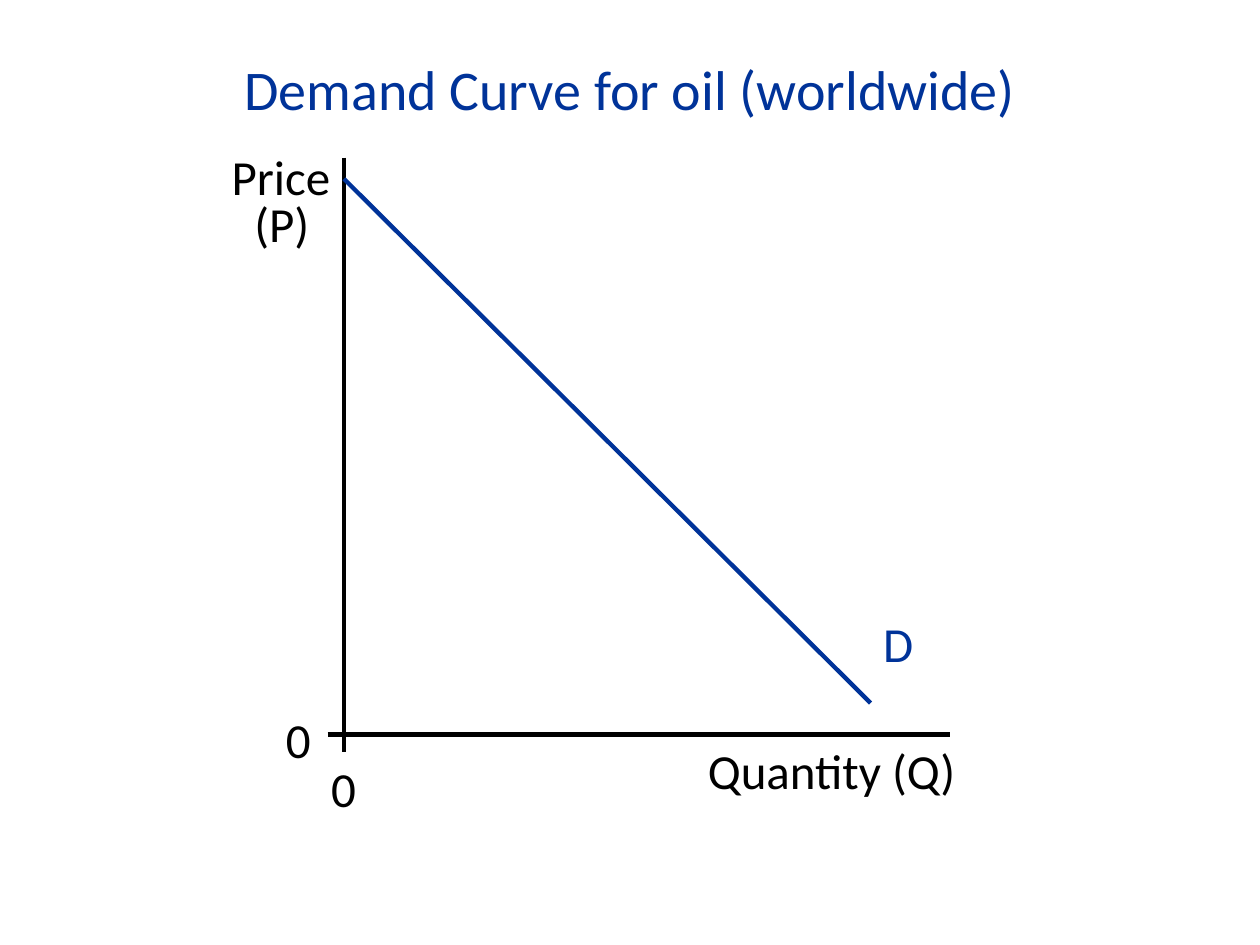
from lxml import etree
from pptx import Presentation
from pptx import util as u
from pptx.dml.color import RGBColor
from pptx.enum import shapes, text
from pptx.oxml.ns import qn

COLORS = {"ink": "000000", "demand": "003399"}


class Painter:
    """Draws styled labels and lines on the current slide."""

    font = "Calibri"
    line_width = 2.5

    def __init__(self, slide):
        self.s = slide

    def label(self, lines, left, top, width, height, color="ink", size=28,
              align=None, anchor=text.MSO_ANCHOR.TOP, spacing=None,
              indents=None, wrap=True):
        sp = self.s.shapes.add_textbox(*map(u.Inches, (left, top, width, height)))
        tf = sp.text_frame
        tf.word_wrap = wrap
        tf.auto_size = text.MSO_AUTO_SIZE.SHAPE_TO_FIT_TEXT
        tf.vertical_anchor = anchor
        tf.text = "\n".join(lines)
        for p, indent in zip(tf.paragraphs, indents or [0] * len(lines)):
            if indent:
                p._p.get_or_add_pPr().set("marL", str(u.Inches(indent)))
            p.alignment = align
            p.line_spacing = spacing
            p.font.name = self.font
            p.font.size = u.Pt(size)
            p.font.color.rgb = RGBColor.from_string(COLORS[color])

    def line(self, x1, y1, x2, y2, color="ink"):
        cxn = self.s.shapes.add_connector(
            shapes.MSO_CONNECTOR.STRAIGHT, *map(u.Inches, (x1, y1, x2, y2)))
        cxn.line.width = u.Pt(self.line_width)
        cxn.line.color.rgb = RGBColor.from_string(COLORS[color])
        etree.SubElement(cxn._element.spPr, qn("a:effectLst"))


def main():
    prs = Presentation()
    prs.slide_width, prs.slide_height = u.Inches(10), u.Inches(7.5)
    paint = Painter(prs.slides.add_slide(prs.slide_layouts[6]))
    axis_x, axis_y = 2.73, 5.83

    paint.label(["Demand Curve for oil (worldwide)"], 0.7, 0.38, 8.6, 0.64,
                color="demand", size=32, align=text.PP_ALIGN.CENTER,
                anchor=text.MSO_ANCHOR.MIDDLE)
    paint.label(["D"], 6.91, 4.82, 0.58, 0.57, color="demand")
    paint.line(axis_x, 1.25, axis_x, 5.97)
    paint.line(2.6, axis_y, 7.54, axis_y)
    paint.label(["Quantity (Q)"], 5.52, axis_y, 3.26, 0.57)
    paint.label(["Price", "(P)"], 1.74, 1.2, 1.06, 0.86,
                spacing=0.8, indents=[0, 0.18])
    paint.line(axis_x, 1.42, 6.91, 5.58, color="demand")
    paint.label(["0"], 2.53, 5.97, 0.4, 0.57, wrap=False)
    paint.label(["0"], 2.17, 5.58, 0.7, 0.57)

    prs.save("out.pptx")


if __name__ == "__main__":
    main()
